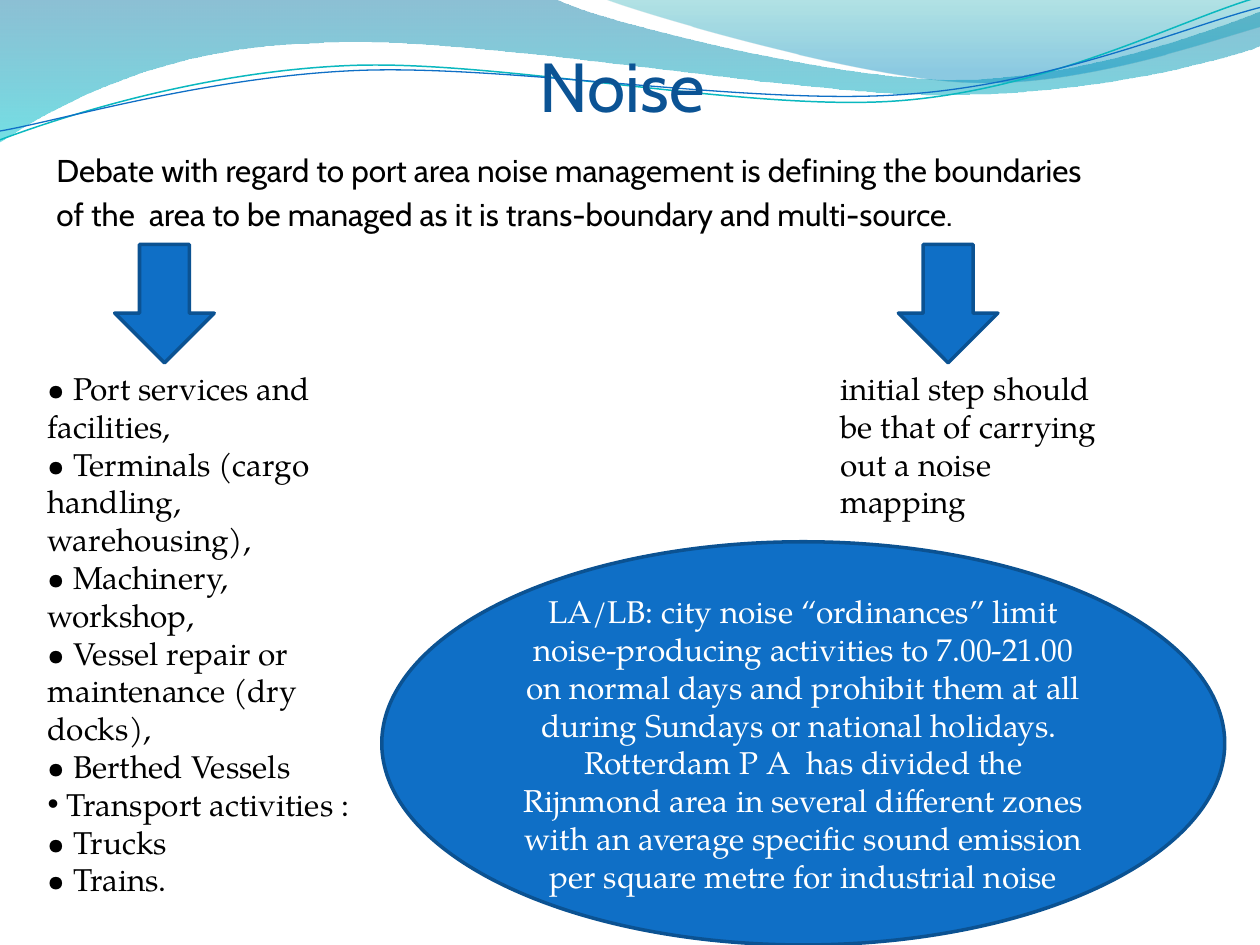
from math import cos, radians, sin

from lxml import etree
from pptx import Presentation
from pptx.dml.color import RGBColor
from pptx.enum.shapes import MSO_SHAPE as Preset
from pptx.enum.text import MSO_ANCHOR as Anchor, MSO_AUTO_SIZE as AutoSize, PP_ALIGN as Align
from pptx.oxml.ns import qn
from pptx.util import Inches, Pt

COLORS = {
    "title": "0B5394", "text": "000000", "light": "FFFFFF",
    "blue": "0F6FC6", "outline": "0B5292", "teal": "0AB8BF",
    "wave_blue": "0074A1", "wave_teal": "00C6CF",
    "crest_teal": "00A1A9", "crest_blue": "008BBF",
}
SANS, SERIF = "Cabin", "TeX Gyre Pagella"
TILT = -2.7

# Each outline is a start point, then points (2 numbers) or Bézier curves (6 numbers).
WAVE = [(0, 0), (4.4, -0.01),
        (4.76, 0.17, 6.64, 0.63, 7.58, 0.63), (8.53, 0.63, 9.58, 0.26, 10, 0.09),
        (10.01, 0.36),
        (9.83, 0.44, 8.7, 0.76, 7.46, 0.75), (6.22, 0.75, 3.82, 0.28, 2.57, 0.34),
        (1.29, 0.36, 0.46, 0.83, -0.01, 1.13), (0, 0)]
CREST = [(4.79, -0.01),
         (5.09, 0.11, 6.82, 0.62, 7.69, 0.65), (8.56, 0.69, 9.61, 0.32, 10, 0.21),
         (10, 0), (4.79, -0.01)]
TEAL_LINE = [(0, 1.11),
             (0.48, 0.93, 1.58, 0.57, 2.77, 0.52), (3.95, 0.47, 5.93, 0.89, 7.13, 0.8),
             (8.33, 0.71, 9.38, 0.15, 9.98, -0.02)]
BLUE_LINE = [(0, 1.04),
             (0.47, 0.96, 1.64, 0.61, 2.83, 0.56), (4.03, 0.51, 5.97, 0.84, 7.17, 0.75),
             (8.36, 0.67, 9.41, 0.21, 10, 0.06)]

DEBATE = ["Debate with regard to port area noise management is defining the boundaries",
          "of the  area to be managed as it is trans-boundary and multi-source."]
SOURCES = ["• Port services and facilities,",
           "• Terminals (cargo handling, warehousing),",
           "• Machinery, workshop,",
           "• Vessel repair or maintenance (dry docks),",
           "• Berthed Vessels",
           " Transport activities :",
           "• Trucks",
           "• Trains."]
FIRST_STEP = ["initial step should be that of carrying out a noise mapping"]
EXAMPLES = ["LA/LB: city noise “ordinances” limit noise-producing activities to 7.00-21.00 "
            "on normal days and prohibit them at all during Sundays or national holidays. ",
            "Rotterdam P A  has divided the Rijnmond area in several different zones with an "
            "average specific sound emission per square metre for industrial noise"]


def color(name):
    return RGBColor.from_string(COLORS[name])


def pairs(part):
    return list(zip(part[::2], part[1::2]))


def add_outline(slide, outline, close):
    """Add a freeform through all points, then merge each curve's three segments into one."""
    points = [(Inches(x), Inches(y)) for part in outline for x, y in pairs(part)]
    builder = slide.shapes.build_freeform(*points[0])
    builder.add_line_segments(points[1:], close=close)
    shape = builder.convert_to_shape()
    shape.shadow.inherit = False
    segments = iter(list(shape._element.iter(qn("a:lnTo"))))
    for part in outline[1:]:
        group = [next(segments) for _ in pairs(part)]
        if len(group) == 3:
            curve = etree.Element(qn("a:cubicBezTo"))
            group[0].addprevious(curve)
            for segment in group:
                curve.append(segment[0])
                segment.getparent().remove(segment)
    return shape


def add_wave(slide, outline, stops):
    """Add a borderless shape with a top-to-bottom gradient of (position, color, opacity)."""
    shape = add_outline(slide, outline, True)
    shape.line.fill.background()
    shape.fill.gradient()
    shape.fill.gradient_angle = 270
    for stop, (position, name, _) in zip(shape.fill.gradient_stops, stops):
        stop.position = position
        stop.color.rgb = color(name)
    swatches = shape._element.spPr.iter(qn("a:srgbClr"))
    for swatch, (_, _, opacity) in zip(swatches, stops):
        etree.SubElement(swatch, qn("a:alpha")).set("val", str(opacity * 1000))


def turn(part, center, degrees):
    cosine, sine = cos(radians(degrees)), sin(radians(degrees))
    turned = []
    for x, y in pairs(part):
        dx, dy = x - center[0], y - center[1]
        turned += [center[0] + dx * cosine - dy * sine,
                   center[1] + dx * sine + dy * cosine]
    return turned


def add_curve(slide, outline, center, name, width):
    """Add an open curve as a level shape that is tilted about its center."""
    level = [turn(part, center, -TILT) for part in outline]
    shape = add_outline(slide, level, False)
    shape.rotation = TILT
    shape.fill.background()
    shape.line.color.rgb = color(name)
    shape.line.width = Pt(width)


def write(frame, lines, font, name="text", size=18, align=Align.LEFT):
    frame.word_wrap = True
    for index, line in enumerate(lines):
        para = frame.paragraphs[0] if index == 0 else frame.add_paragraph()
        para.alignment = align
        span = para.add_run()
        span.text = line
        span.font.name = font
        span.font.size = Pt(size)
        span.font.color.rgb = color(name)


def add_text(slide, place, lines, font, **style):
    box = slide.shapes.add_textbox(*map(Inches, place))
    write(box.text_frame, lines, font, **style)
    return box.text_frame


def add_preset(slide, preset, place):
    shape = slide.shapes.add_shape(preset, *map(Inches, place))
    shape.shadow.inherit = False
    shape.fill.solid()
    shape.fill.fore_color.rgb = color("blue")
    shape.line.color.rgb = color("outline")
    shape.line.width = Pt(2)
    return shape


def add_title(slide):
    frame = add_text(slide, (0.5, 0.29, 9, 0.71), ["Noise "], SANS,
                     name="title", size=39.6, align=Align.CENTER)
    frame.vertical_anchor = Anchor.BOTTOM
    frame.margin_left = frame.margin_right = frame.margin_bottom = 0


def add_debate(slide):
    frame = add_text(slide, (0.35, 1.15, 9, 0.94), DEBATE, SANS)
    for para in frame.paragraphs:
        para.space_before = Pt(3.6)
        properties = para._p.get_or_add_pPr()
        properties.set("marL", str(Inches(0.3)))
        properties.set("indent", str(Inches(-0.3)))


def add_sources(slide):
    frame = add_text(slide, (0.28, 2.88, 2.6, 4.34), SOURCES, SERIF)
    frame.auto_size = AutoSize.SHAPE_TO_FIT_TEXT
    for para in frame.paragraphs:
        if not para.text.startswith("•"):
            properties = para._p.get_or_add_pPr()
            etree.SubElement(properties, qn("a:buFont")).set("typeface", "Arial")
            etree.SubElement(properties, qn("a:buChar")).set("char", "•")


def main():
    deck = Presentation()
    deck.slide_width, deck.slide_height = Inches(10), Inches(7.5)
    page = deck.slides.add_slide(deck.slide_layouts[6])

    add_wave(page, WAVE, [(0, "wave_blue", 45), (1, "wave_teal", 55)])
    add_wave(page, CREST, [(0, "crest_teal", 30), (0.8, "crest_blue", 45)])
    add_curve(page, TEAL_LINE, (4.99, 0.58), "teal", 0.85)
    add_curve(page, BLUE_LINE, (5, 0.59), "blue", 0.75)

    add_title(page)
    add_debate(page)
    for left in (0.91, 7.13):
        add_preset(page, Preset.DOWN_ARROW, (left, 1.94, 0.79, 0.94))
    add_sources(page)
    step = add_text(page, (6.57, 2.88, 2.28, 1.31), FIRST_STEP, SERIF)
    step.auto_size = AutoSize.SHAPE_TO_FIT_TEXT

    ellipse = add_preset(page, Preset.OVAL, (3.03, 4.3, 6.69, 3.2))
    ellipse.text_frame.vertical_anchor = Anchor.MIDDLE
    write(ellipse.text_frame, EXAMPLES, SERIF, name="light", align=Align.CENTER)

    deck.save("out.pptx")


if __name__ == "__main__":
    main()
